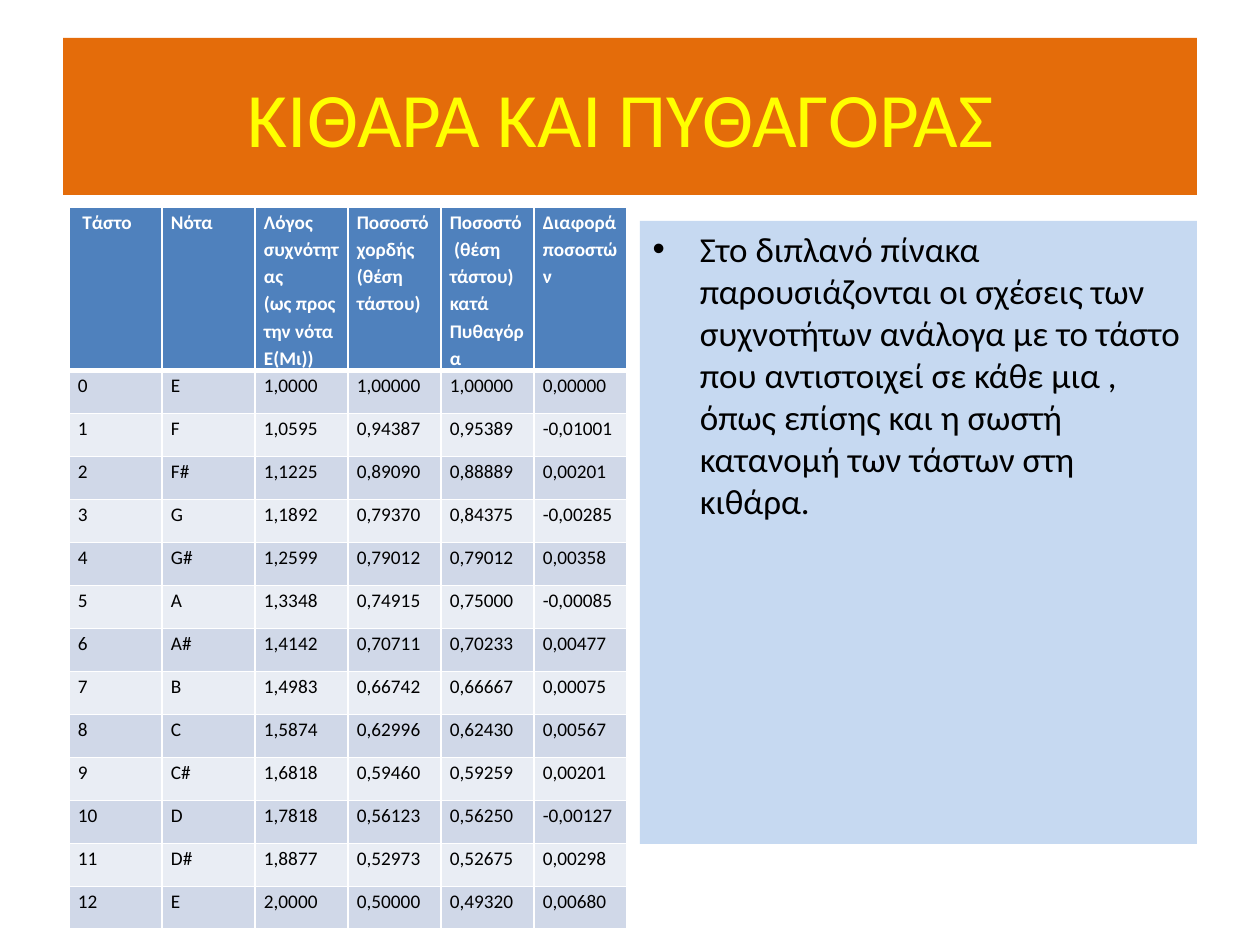
from lxml.etree import SubElement
from pptx import Presentation
from pptx.dml.color import RGBColor
from pptx.enum.text import MSO_ANCHOR, PP_ALIGN
from pptx.oxml.ns import qn
from pptx.util import Pt

PX = 914400 // 126
FONT = "Calibri"
WHITE = "FFFFFF"
HEADER_FILL = "4F81BD"
BAND_FILLS = ["D0D8E8", "E9EDF4"]
COLUMN_WIDTH, HEADER_HEIGHT, ROW_HEIGHT = 93, 151, 43

TITLE = "ΚΙΘΑΡΑ ΚΑΙ ΠΥΘΑΓΟΡΑΣ "
EXPLANATION = (
    "Στο διπλανό πίνακα παρουσιάζονται οι σχέσεις των συχνοτήτων ανάλογα με "
    "το τάστο που αντιστοιχεί σε κάθε μια , όπως επίσης και η σωστή κατανομή "
    "των τάστων στη κιθάρα."
)
HEADERS = [
    " Τάστο",
    "Νότα",
    "Λόγος συχνότητας\n(ως προς την νότα Ε(Μι))",
    "Ποσοστό χορδής\n(θέση τάστου)",
    "Ποσοστό  (θέση τάστου) κατά Πυθαγόρα",
    "Διαφορά ποσοστών",
]
FRETS = [
    ("0", "Ε", "1,0000", "1,00000", "1,00000", "0,00000"),
    ("1", "F", "1,0595", "0,94387", "0,95389", "-0,01001"),
    ("2", "F#", "1,1225", "0,89090", "0,88889", "0,00201"),
    ("3", "G", "1,1892", "0,79370", "0,84375", "-0,00285"),
    ("4", "G#", "1,2599", "0,79012", "0,79012", "0,00358"),
    ("5", "A", "1,3348", "0,74915", "0,75000", "-0,00085"),
    ("6", "A#", "1,4142", "0,70711", "0,70233", "0,00477"),
    ("7", "B", "1,4983", "0,66742", "0,66667", "0,00075"),
    ("8", "C", "1,5874", "0,62996", "0,62430", "0,00567"),
    ("9", "C#", "1,6818", "0,59460", "0,59259", "0,00201"),
    ("10", "D", "1,7818", "0,56123", "0,56250", "-0,00127"),
    ("11", "D#", "1,8877", "0,52973", "0,52675", "0,00298"),
    ("12", "E", "2,0000", "0,50000", "0,49320", "0,00680"),
]


def px(length):
    return length * PX


def set_fill(fill, color):
    fill.solid()
    fill.fore_color.rgb = RGBColor.from_string(color)


def write_text(frame, text, size, color="000000", bold=False, align=None, line_spacing=None):
    """Write one paragraph for each line of text."""
    for index, line in enumerate(text.split("\n")):
        paragraph = frame.add_paragraph() if index else frame.paragraphs[0]
        paragraph.alignment = align
        paragraph.line_spacing = line_spacing
        run = paragraph.add_run()
        run.text = line
        run.font.name = FONT
        run.font.size = Pt(size)
        run.font.bold = bold
        run.font.color.rgb = RGBColor.from_string(color)


def fill_placeholder(shape, box, fill, text, **text_format):
    shape.left, shape.top, shape.width, shape.height = map(px, box)
    set_fill(shape.fill, fill)
    write_text(shape.text_frame, text, **text_format)


def set_borders(cell, bottom_width):
    properties = cell._tc.get_or_add_tcPr()
    for side, width in (("L", 1), ("R", 1), ("T", 1), ("B", bottom_width)):
        line = SubElement(properties, qn(f"a:ln{side}"), w=str(Pt(width)))
        SubElement(SubElement(line, qn("a:solidFill")), qn("a:srgbClr"), val=WHITE)


def format_cell(cell, text, fill, bottom_width=1, **text_format):
    cell.margin_left = cell.margin_right = px(9)
    cell.margin_top = cell.margin_bottom = 0
    set_borders(cell, bottom_width)
    set_fill(cell.fill, fill)
    write_text(cell.text_frame, text, size=11, line_spacing=1.15, **text_format)


def add_fret_table(slide, left, top):
    row_count, column_count = len(FRETS) + 1, len(HEADERS)
    table = slide.shapes.add_table(
        row_count, column_count, px(left), px(top),
        px(COLUMN_WIDTH * column_count), px(HEADER_HEIGHT + ROW_HEIGHT * len(FRETS)),
    ).table
    for column in table.columns:
        column.width = px(COLUMN_WIDTH)
    for index, row in enumerate(table.rows):
        row.height = px(ROW_HEIGHT if index else HEADER_HEIGHT)
    for cell, text in zip(table.rows[0].cells, HEADERS):
        format_cell(cell, text, HEADER_FILL, bottom_width=3, color=WHITE, bold=True)
    for index, values in enumerate(FRETS):
        for cell, text in zip(table.rows[index + 1].cells, values):
            format_cell(cell, text, BAND_FILLS[index % 2])


def main():
    presentation = Presentation()
    presentation.slide_width, presentation.slide_height = px(1260), px(945)
    slide = presentation.slides.add_slide(presentation.slide_layouts[1])
    title, body = slide.placeholders
    fill_placeholder(title, (63, 38, 1134, 157), "E46C0A", TITLE,
                     size=44, color="FFFF00", align=PP_ALIGN.CENTER)
    title.text_frame.vertical_anchor = MSO_ANCHOR.MIDDLE
    add_fret_table(slide, 69, 207)
    fill_placeholder(body, (640, 221, 557, 623), "C6D9F1", EXPLANATION, size=20)
    presentation.save("out.pptx")


if __name__ == "__main__":
    main()
